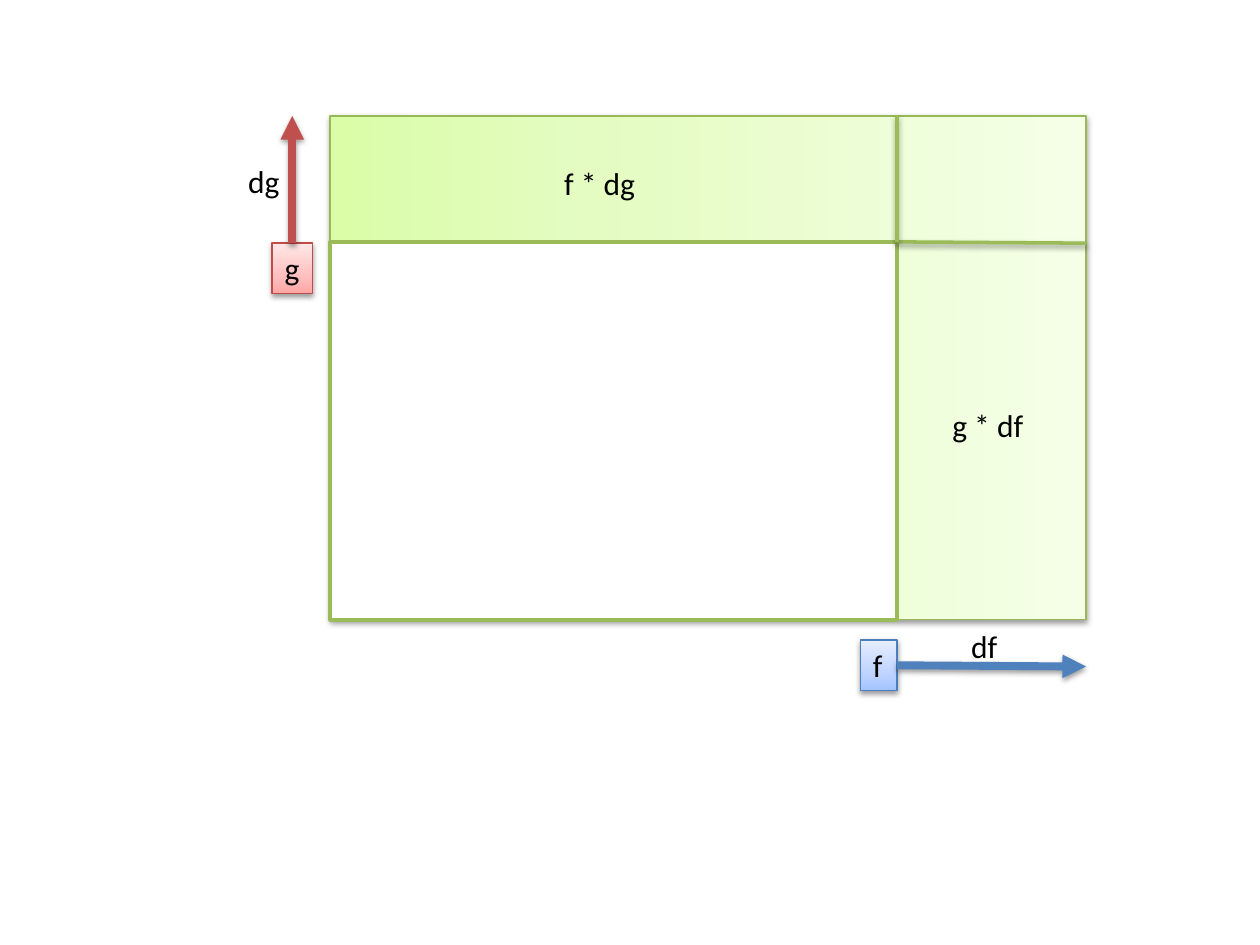
from typing import NamedTuple, Optional

from lxml.etree import SubElement
from pptx import Presentation
from pptx.dml.color import RGBColor
from pptx.enum.shapes import MSO_CONNECTOR, MSO_SHAPE
from pptx.enum.text import MSO_ANCHOR, MSO_AUTO_SIZE, PP_ALIGN
from pptx.oxml.ns import qn
from pptx.util import Inches, Pt

BLACK = RGBColor(0x00, 0x00, 0x00)
WHITE = RGBColor(0xFF, 0xFF, 0xFF)
GREEN = RGBColor(0x9B, 0xBB, 0x59)
GREEN_EDGE = RGBColor(0x98, 0xB9, 0x55)
RED = RGBColor(0xC0, 0x50, 0x4D)
RED_EDGE = RGBColor(0xBF, 0x4C, 0x48)
BLUE = RGBColor(0x4F, 0x81, 0xBD)
BLUE_EDGE = RGBColor(0x4B, 0x7E, 0xBC)

GREEN_SHADES = tuple(map(RGBColor.from_string, ("DAFDA7", "E4FCC2", "F5FFE7")))
RED_SHADES = tuple(map(RGBColor.from_string, ("FFA6A5", "FFC0BF", "FFE7E7")))
BLUE_SHADES = tuple(map(RGBColor.from_string, ("A4C4FF", "BFD4FF", "E6EEFF")))
SHADE_STOPS = (0, 35, 100)

# Product rectangle f × g, grown by df to the right and dg upwards
LEFT, TOP = 2.62, 0.92
F, G, DF, DG = 4.5, 3, 1.5, 1
F_EDGE, G_EDGE = LEFT + F, TOP + DG
RIGHT = F_EDGE + DF
LABEL_HEIGHT = 0.4


class Box(NamedTuple):
    left: float
    top: float
    width: float
    height: float
    edge: RGBColor
    edge_width: float = 0.75
    shades: Optional[tuple] = None
    angle: int = 90
    label: str = ""


class Segment(NamedTuple):
    start: tuple
    end: tuple
    color: RGBColor
    width: float
    arrow: bool = False


class Label(NamedTuple):
    left: float
    top: float
    width: float
    text: str


def add_shadow(shape) -> None:
    properties = shape._element.spPr
    effects = properties.find(qn("a:effectLst"))
    if effects is None:
        effects = SubElement(properties, qn("a:effectLst"))
    shadow = SubElement(effects, qn("a:outerShdw"), blurRad=str(Pt(3.1)),
                        dist=str(Pt(1.6)), dir="5400000", rotWithShape="0")
    color = SubElement(shadow, qn("a:srgbClr"), val=str(BLACK))
    SubElement(color, qn("a:alpha"), val="38000")


def fill_gradient(shape, shades: tuple, angle: int) -> None:
    """Fill with three shades; the angle runs counter-clockwise."""
    shape.fill.gradient()
    shape.fill.gradient_angle = angle
    stops = shape._element.spPr.find(qn("a:gradFill")).find(qn("a:gsLst"))
    stops.clear()
    for position, shade in zip(SHADE_STOPS, shades):
        stop = SubElement(stops, qn("a:gs"), pos=str(position * 1000))
        SubElement(stop, qn("a:srgbClr"), val=str(shade))


def write(shape, text: str) -> None:
    frame = shape.text_frame
    frame.word_wrap = False
    frame.auto_size = MSO_AUTO_SIZE.SHAPE_TO_FIT_TEXT
    frame.vertical_anchor = MSO_ANCHOR.TOP
    paragraph = frame.paragraphs[0]
    paragraph.alignment = PP_ALIGN.LEFT
    run = paragraph.add_run()
    run.text = text
    run.font.name = "Calibri"
    run.font.size = Pt(18)
    run.font.color.rgb = BLACK


def draw_box(slide, box: Box) -> None:
    shape = slide.shapes.add_shape(MSO_SHAPE.RECTANGLE, *map(Inches, box[:4]))
    shape.shadow.inherit = False
    shape.line.color.rgb = box.edge
    shape.line.width = Pt(box.edge_width)
    if box.shades:
        fill_gradient(shape, box.shades, box.angle)
        add_shadow(shape)
    else:
        shape.fill.solid()
        shape.fill.fore_color.rgb = WHITE
    if box.label:
        write(shape, box.label)


def draw_segment(slide, segment: Segment) -> None:
    ends = map(Inches, segment.start + segment.end)
    connector = slide.shapes.add_connector(MSO_CONNECTOR.STRAIGHT, *ends)
    connector.line.color.rgb = segment.color
    connector.line.width = Pt(segment.width)
    if segment.arrow:
        outline = connector._element.spPr.find(qn("a:ln"))
        SubElement(outline, qn("a:tailEnd"), type="triangle")
    add_shadow(connector)


def draw_label(slide, label: Label) -> None:
    shape = slide.shapes.add_textbox(Inches(label.left), Inches(label.top),
                                     Inches(label.width), Inches(LABEL_HEIGHT))
    write(shape, label.text)


MARKERS = (
    Box(2.16, 1.93, 0.32, LABEL_HEIGHT, RED_EDGE, shades=RED_SHADES, label="g"),
    Box(6.83, 5.08, 0.29, LABEL_HEIGHT, BLUE_EDGE, shades=BLUE_SHADES, label="f"),
)
GROWTH_ARROWS = (
    Segment((F_EDGE, 5.28), (RIGHT, 5.29), BLUE, 4.5, arrow=True),
    Segment((2.32, 1.93), (2.32, TOP), RED, 4.5, arrow=True),
)
AREAS = (
    Box(LEFT, TOP, F + DF, G + DG, GREEN_EDGE, shades=GREEN_SHADES, angle=0),
    Box(LEFT, G_EDGE, F, G, GREEN, edge_width=2),
)
CORNER_EDGES = (
    Segment((F_EDGE, G_EDGE), (RIGHT, 1.93), GREEN, 2),
    Segment((F_EDGE, G_EDGE), (F_EDGE, TOP), GREEN, 2),
)
LABELS = (
    Label(4.38, 1.25, 0.77, "f * dg"),
    Label(7.46, 3.17, 0.78, "g * df"),
    Label(1.87, 1.24, 0.45, "dg"),
    Label(7.61, 4.93, 0.41, "df"),
)


def main() -> None:
    presentation = Presentation()
    presentation.slide_width = Inches(10)
    presentation.slide_height = Inches(7.5)
    slide = presentation.slides.add_slide(presentation.slide_layouts[6])
    for draw, parts in (
        (draw_box, MARKERS),
        (draw_segment, GROWTH_ARROWS),
        (draw_box, AREAS),
        (draw_segment, CORNER_EDGES),
        (draw_label, LABELS),
    ):
        for part in parts:
            draw(slide, part)
    presentation.save("out.pptx")


if __name__ == "__main__":
    main()
